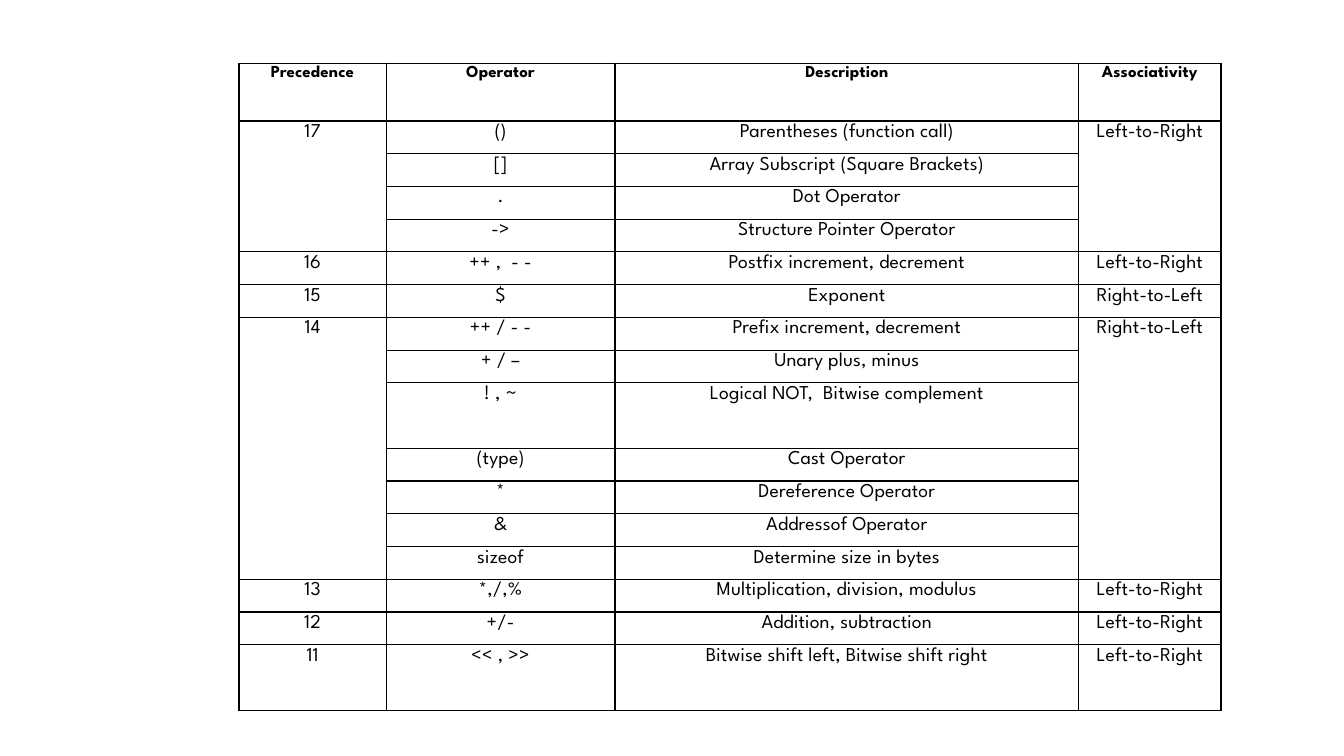
from dataclasses import dataclass

from lxml import etree
from pptx import Presentation
from pptx.dml.color import RGBColor
from pptx.enum.text import PP_ALIGN
from pptx.oxml.ns import qn
from pptx.table import Table, _Cell
from pptx.util import Inches, Pt

CENTER = PP_ALIGN.CENTER


@dataclass(frozen=True)
class Theme:
    font: str = "League Spartan"
    ink: str = "000000"
    head: float = 12
    body: float = 14
    track: float = 0.1
    lead: float = 1.15
    after: float = 3.8
    rule: float = 1


@dataclass(frozen=True)
class Entry:
    sign: str
    note: str
    units: int = 1


@dataclass(frozen=True)
class Group:
    rank: int
    order: str
    items: tuple[Entry, ...]


THEME = Theme()
LEFT, TOP = 2.37, 0.63
WIDTHS = (1.46, 2.27, 4.6, 1.41)
HEAD_H, FULL_H = 0.57, 6.42
HEADS = ("Precedence", "Operator", "Description", "Associativity")
LTR, RTL = "Left-to-Right", "Right-to-Left"

GROUPS = (
    Group(17, LTR, (
        Entry("()", "Parentheses (function call)"),
        Entry("[]", "Array Subscript (Square Brackets)"),
        Entry(".", "Dot Operator"),
        Entry("->", "Structure Pointer Operator"),
    )),
    Group(16, LTR, (Entry("++ ,  - -", "Postfix increment, decrement"),)),
    Group(15, RTL, (Entry("$", "Exponent"),)),
    Group(14, RTL, (
        Entry("++ / - -", "Prefix increment, decrement"),
        Entry("+ / –", "Unary plus, minus"),
        Entry("! , ~", "Logical NOT,  Bitwise complement", 2),
        Entry("(type)", "Cast Operator"),
        Entry("*", "Dereference Operator"),
        Entry("&", "Addressof Operator"),
        Entry("sizeof", "Determine size in bytes"),
    )),
    Group(13, LTR, (Entry("*,/,%", "Multiplication, division, modulus"),)),
    Group(12, LTR, (Entry("+/-", "Addition, subtraction"),)),
    Group(11, LTR, (
        Entry("<< , >>", "Bitwise shift left, Bitwise shift right", 2),
    )),
)


def frame(cell: _Cell) -> None:
    props = cell._tc.get_or_add_tcPr()
    for side in ("a:lnL", "a:lnR", "a:lnT", "a:lnB"):
        line = etree.SubElement(props, qn(side), w=str(Pt(THEME.rule)))
        fill = etree.SubElement(line, qn("a:solidFill"))
        etree.SubElement(fill, qn("a:srgbClr"), val=THEME.ink)
    cell.fill.background()


def write(cell: _Cell, text: str, head: bool = False) -> None:
    cell.margin_left = cell.margin_right = Inches(0.05)
    cell.margin_top = cell.margin_bottom = 0
    para = cell.text_frame.paragraphs[0]
    para.text = text
    para.alignment = CENTER
    para.line_spacing = THEME.lead
    para.space_after = Pt(0 if head else THEME.after)
    font = para.font
    font.name = THEME.font
    font.size = Pt(THEME.head if head else THEME.body)
    font.bold = head
    font.color.rgb = RGBColor.from_string(THEME.ink)
    for run in para.runs:
        run._r.get_or_add_rPr().set("spc", str(round(THEME.track * 100)))


def fill_group(table: Table, group: Group, first: int, unit: float) -> int:
    last = first + len(group.items) - 1
    for row, item in enumerate(group.items, first):
        table.rows[row].height = Inches(unit * item.units)
        write(table.cell(row, 1), item.sign)
        write(table.cell(row, 2), item.note)
    for col, text in ((0, str(group.rank)), (3, group.order)):
        write(table.cell(first, col), text)
        if last > first:
            table.cell(first, col).merge(table.cell(last, col))
    return last + 1


def main() -> None:
    deck = Presentation()
    deck.slide_width, deck.slide_height = Inches(13.33), Inches(7.5)
    slide = deck.slides.add_slide(deck.slide_layouts[6])
    items = [item for group in GROUPS for item in group.items]
    unit = (FULL_H - HEAD_H) / sum(item.units for item in items)
    table = slide.shapes.add_table(
        len(items) + 1, len(HEADS), Inches(LEFT), Inches(TOP),
        Inches(sum(WIDTHS)), Inches(FULL_H),
    ).table
    table.first_row = table.horz_banding = False
    for col, width in enumerate(WIDTHS):
        table.columns[col].width = Inches(width)
    for cell in table.iter_cells():
        frame(cell)

    table.rows[0].height = Inches(HEAD_H)
    for col, text in enumerate(HEADS):
        write(table.cell(0, col), text, head=True)
    row = 1
    for group in GROUPS:
        row = fill_group(table, group, row, unit)
    deck.save("out.pptx")


if __name__ == "__main__":
    main()
